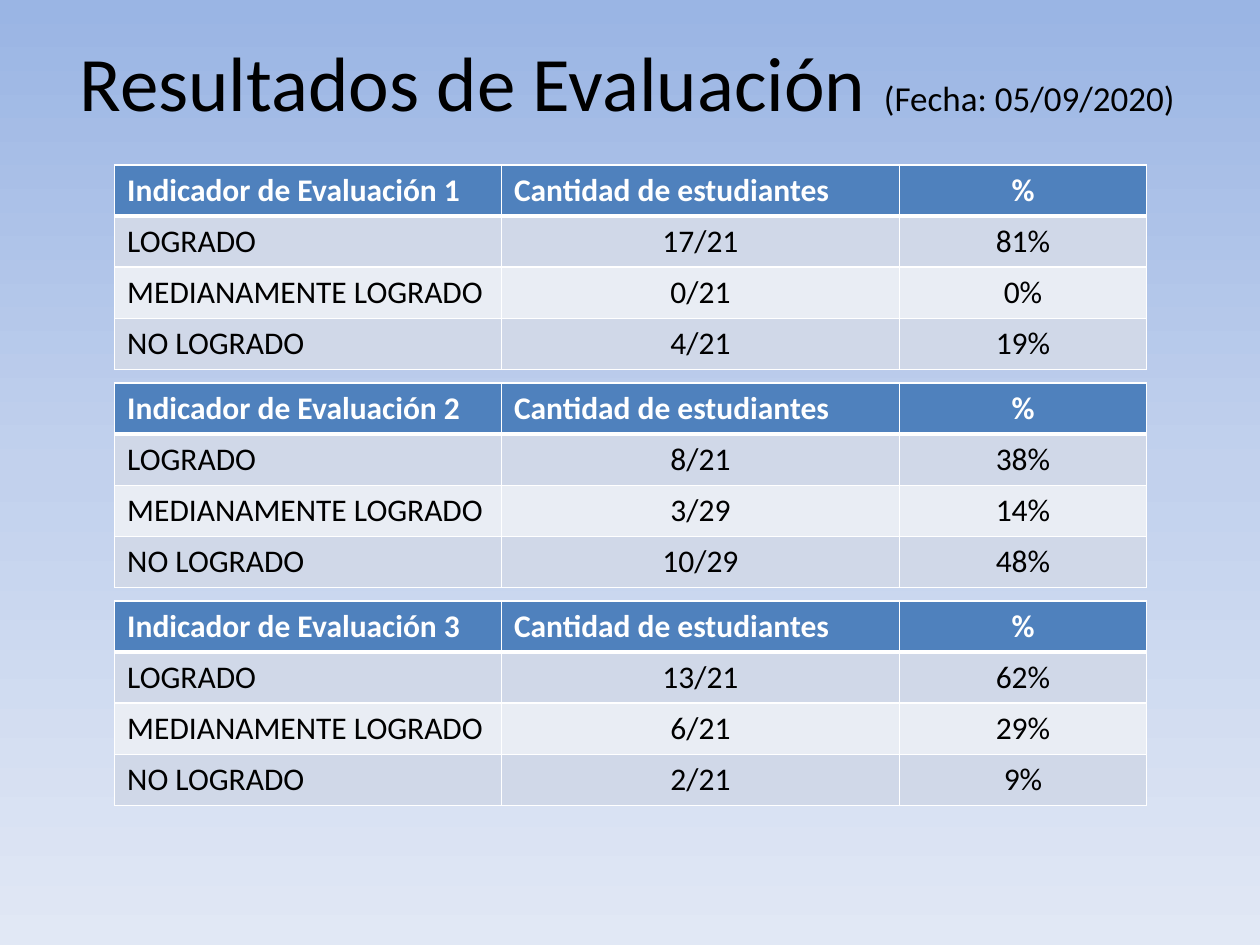
from copy import deepcopy

from lxml import etree
from pptx import Presentation
from pptx.dml.color import RGBColor
from pptx.enum import text as t
from pptx.oxml.ns import qn
from pptx.util import Inches, Pt

COLORS = {
    "sky": "9AB5E4", "mist": "C2D1ED", "pale": "E1E8F5",
    "head": "4F81BD", "odd": "D0D8E8", "even": "E9EDF4",
    "white": "FFFFFF", "black": "000000",
}
FONT = "Calibri"
LEFT, TOP, STEP = 0.91, 1.31, 1.73
WIDTHS = (3.07, 3.16, 1.96)
HEIGHT = 0.405
LEVELS = ("LOGRADO", "MEDIANAMENTE LOGRADO", "NO LOGRADO")
RESULTS = (
    (("17/21", "81%"), ("0/21", "0%"), ("4/21", "19%")),
    (("8/21", "38%"), ("3/29", "14%"), ("10/29", "48%")),
    (("13/21", "62%"), ("6/21", "29%"), ("2/21", "9%")),
)


def color(name):
    return RGBColor.from_string(COLORS[name])


def add_text(para, words, size=18, ink="black", bold=False, center=False):
    run = para.add_run()
    run.text = words
    run.font.name = FONT
    run.font.size = Pt(size)
    run.font.bold = bold
    run.font.color.rgb = color(ink)
    para.alignment = t.PP_ALIGN.CENTER if center else t.PP_ALIGN.LEFT


def paint_back(slide):
    fill = slide.background.fill
    fill.gradient()
    fill.gradient_angle = 270
    # The default gradient has two stops; add one in the middle
    stops = slide._element.find(".//" + qn("a:gsLst"))
    stops.insert(1, deepcopy(stops[0]))
    names = ("sky", "mist", "pale")
    for stop, name, place in zip(fill.gradient_stops, names, (0, 0.5, 1)):
        stop.color.rgb = color(name)
        stop.position = place


def add_title(slide):
    title = slide.shapes.title
    title.left, title.top = Inches(0.51), Inches(0.13)
    title.width, title.height = Inches(9), Inches(1.02)
    frame = title.text_frame
    frame.vertical_anchor = t.MSO_ANCHOR.MIDDLE
    para = frame.paragraphs[0]
    add_text(para, "Resultados de Evaluación ", size=44, center=True)
    add_text(para, "(Fecha: 05/09/2020) ", size=20, center=True)


def set_edges(cell, top=1, bottom=1):
    props = cell._tc.get_or_add_tcPr()
    for side, width in (("L", 1), ("R", 1), ("T", top), ("B", bottom)):
        line = etree.SubElement(props, qn("a:ln" + side), w=str(Pt(width)))
        fill = etree.SubElement(line, qn("a:solidFill"))
        etree.SubElement(fill, qn("a:srgbClr"), val=COLORS["white"])


def add_grid(slide, index, scores):
    rows = [(f"Indicador de Evaluación {index + 1}",
             "Cantidad de estudiantes", "%")]
    rows += [(level, *score) for level, score in zip(LEVELS, scores)]
    table = slide.shapes.add_table(
        len(rows), len(WIDTHS), Inches(LEFT), Inches(TOP + index * STEP),
        Inches(sum(WIDTHS)), Inches(HEIGHT * len(rows))).table
    for column, width in zip(table.columns, WIDTHS):
        column.width = Inches(width)
    for r, row in enumerate(rows):
        head = r == 0
        shade = "head" if head else "odd" if r % 2 else "even"
        table.rows[r].height = Inches(HEIGHT)
        for c, words in enumerate(row):
            cell = table.cell(r, c)
            # A thick rule parts the header from the body
            set_edges(cell, top=3 if r == 1 else 1, bottom=3 if head else 1)
            cell.fill.solid()
            cell.fill.fore_color.rgb = color(shade)
            add_text(cell.text_frame.paragraphs[0], words, bold=head,
                     ink="white" if head else "black",
                     center=c == 2 or (c == 1 and not head))


def main():
    deck = Presentation()
    deck.slide_width, deck.slide_height = Inches(10), Inches(7.5)
    slide = deck.slides.add_slide(deck.slide_layouts[5])
    paint_back(slide)
    add_title(slide)
    # One table for each indicator
    for index, scores in enumerate(RESULTS):
        add_grid(slide, index, scores)
    deck.save("out.pptx")


if __name__ == "__main__":
    main()
